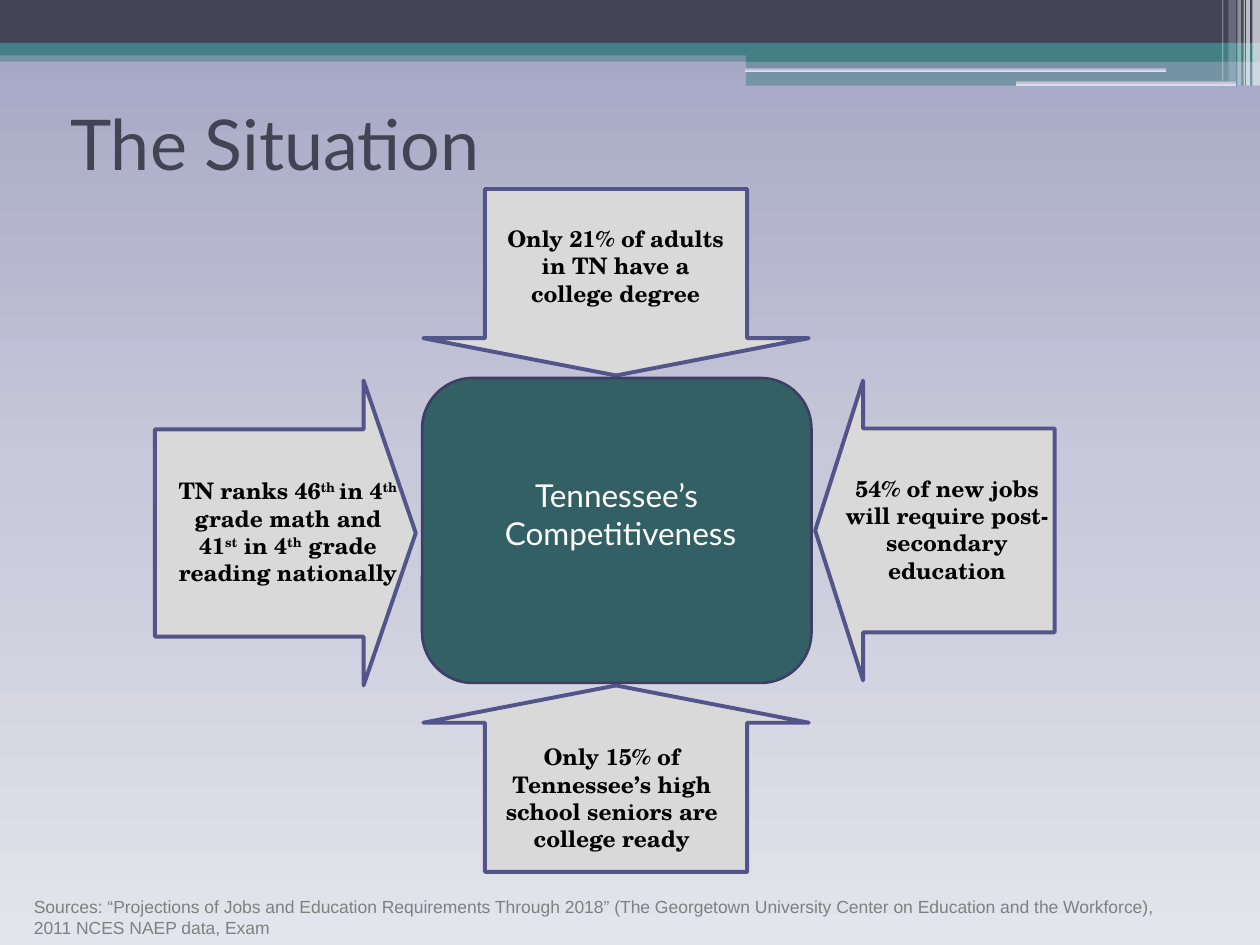
from copy import deepcopy
from dataclasses import dataclass

from pptx import Presentation, util as u
from pptx.dml.color import RGBColor
from pptx.enum import shapes, text
from pptx.oxml import ns, xmlchemy

SHAPE = shapes.MSO_SHAPE
MIDDLE, TOP = text.MSO_ANCHOR.MIDDLE, text.MSO_ANCHOR.TOP
CENTER, LEFT = text.PP_ALIGN.CENTER, text.PP_ALIGN.LEFT


@dataclass(frozen=True)
class Theme:
    backdrop: tuple = ("A3A4C3", "C7C8D9", "E4E4EC")
    dark: str = "424456"
    teal: str = "438086"
    center_fill: str = "326065"
    center_line: str = "3D3E66"
    arrow_fill: str = "D9D9D9"
    arrow_line: str = "53548A"
    white: str = "FFFFFF"
    black: str = "000000"
    gray: str = "808080"
    heading_font: str = "Lato"
    fact_font: str = "TeX Gyre Schola"
    source_font: str = "Arial"
    title_size: int = 40
    center_size: int = 18
    fact_size: int = 13
    source_size: int = 10


def write_text(frame, content, *, size, font, color, bold=False, align=LEFT):
    """Write one paragraph per line; parts between carets are superscript."""
    for index, line in enumerate(content.split("\n")):
        paragraph = frame.paragraphs[0] if index == 0 else frame.add_paragraph()
        paragraph.alignment = align
        for part_index, part in enumerate(line.split("^")):
            if not part:
                continue
            run = paragraph.add_run()
            run.text = part
            run.font.size = u.Pt(size)
            run.font.name = font
            run.font.bold = bold
            run.font.color.rgb = RGBColor.from_string(color)
            if part_index % 2:
                run.font._element.set("baseline", "30000")


class SlideBuilder:
    """Places elements on a grid of 100 columns by 75 rows."""
    COLUMNS, ROWS = 100, 75

    def __init__(self, presentation, theme):
        self.theme = theme
        self.column = presentation.slide_width / self.COLUMNS
        self.row = presentation.slide_height / self.ROWS
        self.slide = presentation.slides.add_slide(presentation.slide_layouts[6])

    def place(self, left, top, columns, rows):
        return (round(left * self.column), round(top * self.row),
                round(columns * self.column), round(rows * self.row))

    def gradient(self, fill, element):
        fill.gradient()
        fill.gradient_angle = 270
        stop_list = next(element.iter(ns.qn("a:gsLst")))
        stop_list.append(deepcopy(stop_list[-1]))
        for index, (stop, color) in enumerate(zip(fill.gradient_stops, self.theme.backdrop)):
            stop.color.rgb = RGBColor.from_string(color)
            stop.position = index / 2

    def background(self):
        self.gradient(self.slide.background.fill, self.slide._element)

    def shape(self, kind, place, fill=None, alpha=100, line=None, width=0, adjust=()):
        """Draw a preset shape; without a fill colour it takes the backdrop gradient."""
        shape = self.slide.shapes.add_shape(kind, *self.place(*place))
        shape.shadow.inherit = False
        for index, value in enumerate(adjust):
            shape.adjustments[index] = value
        if fill:
            shape.fill.solid()
            shape.fill.fore_color.rgb = RGBColor.from_string(fill)
        else:
            self.gradient(shape.fill, shape._element)
        if alpha < 100:
            color = next(shape._element.spPr.iter(ns.qn("a:srgbClr")))
            opacity = xmlchemy.OxmlElement("a:alpha")
            opacity.set("val", str(alpha * 1000))
            color.append(opacity)
        if line:
            shape.line.color.rgb = RGBColor.from_string(line)
            shape.line.width = u.Pt(width)
        else:
            shape.line.fill.background()
        return shape

    def arrow(self, kind, place):
        return self.shape(kind, place, self.theme.arrow_fill, line=self.theme.arrow_line,
                          width=2.25, adjust=(0.68, 0.2))

    def label(self, content, place, anchor=TOP, inset=True, **style):
        box = self.slide.shapes.add_textbox(*self.place(*place))
        frame = box.text_frame
        frame.word_wrap = True
        frame.vertical_anchor = anchor
        if not inset:
            frame.margin_left = frame.margin_right = 0
            frame.margin_top = frame.margin_bottom = 0
        write_text(frame, content, **style)

    def fact(self, content, place):
        self.label(content, place, MIDDLE, inset=False, size=self.theme.fact_size,
                   font=self.theme.fact_font, color=self.theme.black, bold=True, align=CENTER)


def main():
    theme = Theme()
    presentation = Presentation()
    presentation.slide_width, presentation.slide_height = u.Inches(10), u.Inches(7.5)
    builder = SlideBuilder(presentation, theme)
    builder.background()

    # Header bands
    for place, color, alpha in (
        ((0, 4, 100, 0.9), theme.teal, 50),
        ((0, 0, 100, 3.4), theme.dark, 100),
        ((0, 3.4, 100, 1), theme.teal, 100),
        ((59.2, 3.9, 40.8, 1), theme.teal, 100),
        ((59.2, 4.8, 40.8, 2), theme.teal, 50),
    ):
        builder.shape(SHAPE.RECTANGLE, place, color, alpha)
    for place in ((59.1, 5.4, 33.5, 0.3), (80.6, 6.4, 17.5, 0.4)):
        builder.shape(SHAPE.ROUNDED_RECTANGLE, place)

    # Light stripes in the corner
    for left, columns, rows, alpha in (
        (99.4, 0.6, 6.8, 65), (98.9, 0.3, 6.8, 65), (98.7, 0.1, 6.8, 60),
        (98.2, 0.3, 6.8, 40), (97.5, 0.6, 6.4, 20), (97, 0.1, 6.4, 30),
    ):
        builder.shape(SHAPE.RECTANGLE, (left, 0, columns, rows), theme.white, alpha)

    # Title
    builder.label("The Situation", (4.6, 5.5, 90, 11.7), MIDDLE, size=theme.title_size,
                  font=theme.heading_font, color=theme.dark)

    # Arrows pointing at the center, then their facts
    for kind, place in (
        (SHAPE.LEFT_ARROW, (64.7, 30.2, 19, 23.8)),
        (SHAPE.RIGHT_ARROW, (12.3, 30.2, 20.7, 24.2)),
        (SHAPE.DOWN_ARROW, (33.6, 15, 30.6, 14.8)),
        (SHAPE.UP_ARROW, (33.6, 54.4, 30.6, 14.8)),
    ):
        builder.arrow(kind, place)
    for content, place in (
        ("Only 21% of adults in TN have a college degree", (40.2, 17.8, 17.3, 6.6)),
        ("TN ranks 46^th ^in 4^th^ grade math and 41^st^ in 4^th^ grade reading nationally",
         (14.1, 37.8, 17.5, 8.8)),
        ("54% of new jobs will require post-secondary education", (67.1, 37.6, 16.1, 8.8)),
        ("Only 15% of Tennessee’s high school seniors are college ready",
         (39.9, 58.9, 17.3, 8.8)),
    ):
        builder.fact(content, place)

    # Sources
    builder.label("Sources: “Projections of Jobs and Education Requirements Through 2018” "
                  "(The Georgetown University Center on Education and the Workforce),\n"
                  "2011 NCES NAEP data, Exam", (1.7, 70.6, 95.5, 4.4),
                  size=theme.source_size, font=theme.source_font, color=theme.gray)

    # Center
    builder.shape(SHAPE.ROUNDED_RECTANGLE, (33.5, 30, 30.9, 24.2), theme.center_fill,
                  line=theme.center_line, width=1.5)
    builder.label("Tennessee’s \nCompetitiveness", (37.8, 37.3, 22.9, 7.1),
                  size=theme.center_size, font=theme.heading_font, color=theme.white,
                  align=CENTER)

    presentation.save("out.pptx")


if __name__ == "__main__":
    main()
